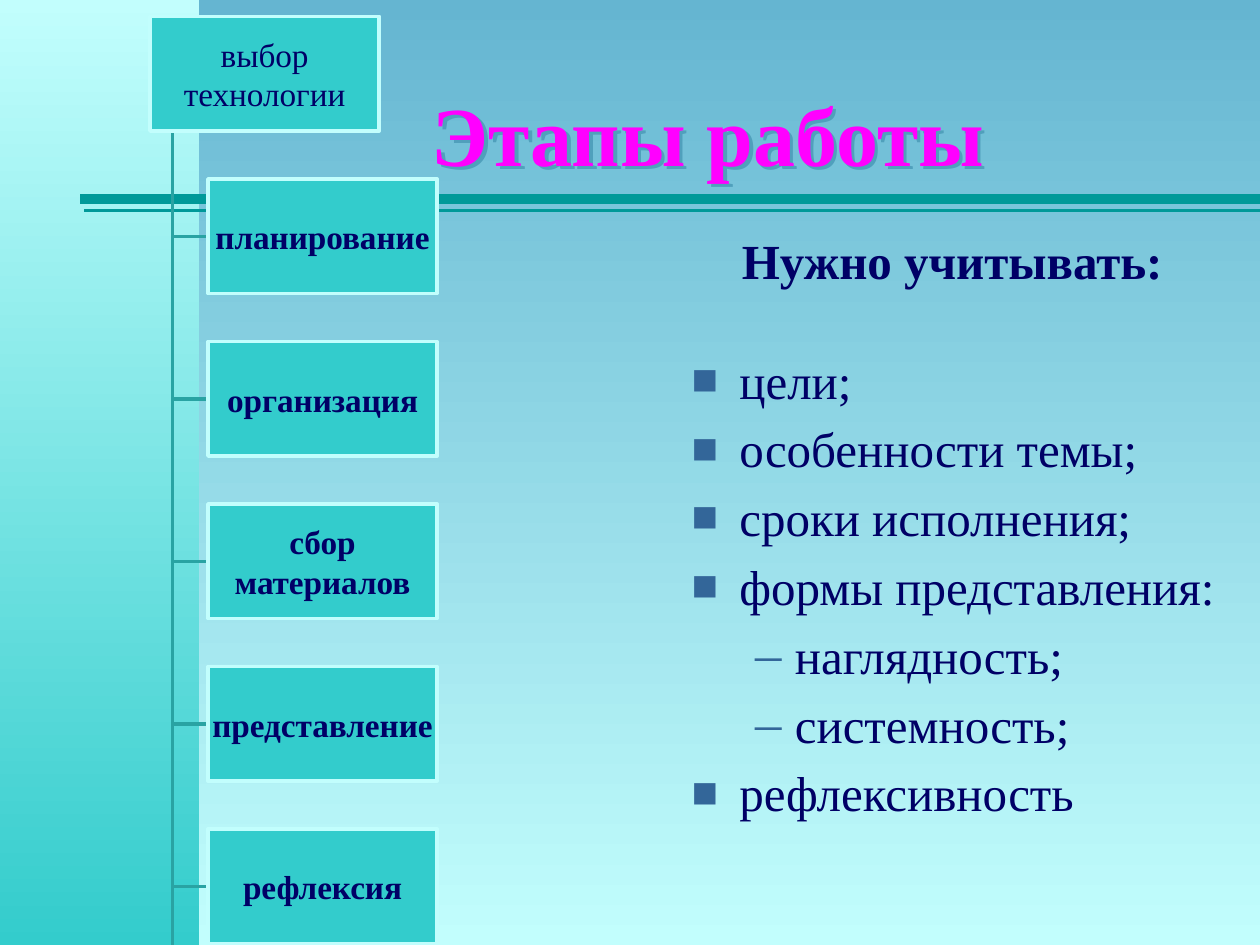
"""Build a slide on the stages of work, with a chain of steps and a list of points."""
from lxml.etree import SubElement as Sub
from pptx import Presentation
from pptx.dml.color import RGBColor as Rgb
from pptx.enum.shapes import MSO_CONNECTOR as Link, MSO_SHAPE as Form
from pptx.enum.text import MSO_ANCHOR as Anchor, PP_ALIGN as Align
from pptx.oxml.ns import qn
from pptx.util import Inches as In, Pt

TITLE = "Этапы работы"
FIRST = "выбор технологии"
STEPS = ["планирование", "организация", "сбор материалов", "представление", "рефлексия"]
HEAD = "Нужно учитывать:"
POINTS = [
    (0, "цели;"),
    (0, "особенности темы;"),
    (0, "сроки исполнения;"),
    (0, "формы представления:"),
    (1, "наглядность;"),
    (1, "системность;"),
    (0, "рефлексивность"),
]
MARKS = [("■", 90, 0.38, 0.38), ("–", 108, 0.82, 0.31)]
HEX = {"sky": "65B5D1", "pale": "C2FEFD", "aqua": "33CCCC", "rule": "009999", "link": "29A3A3",
       "ink": "000066", "pink": "FF00FF", "mark": "336699", "shade": "50A0BC"}
FONT = "Times New Roman"
WIDE, HIGH = 10, 7.5
BOX_W, BOX_H, PITCH = 1.82, 0.91, 1.29
TOP, ROOT, STEP, TRUNK = 0.13, 1.19, 1.65, 1.37
RULES = [(1.67, 2), (1.58, 6)]


def tint(name):
    return Rgb.from_string(HEX[name])


def blend(fill, *names):
    fill.gradient()
    fill.gradient_angle = 270
    for stop, name in zip(fill.gradient_stops, names):
        stop.color.rgb = tint(name)


def write(frame, *lines, size=28, color="ink", bold=False, align=Align.LEFT,
          anchor=Anchor.TOP, pad=(0.1, 0.05), wrap=True):
    frame.word_wrap, frame.vertical_anchor = wrap, anchor
    frame.margin_left = frame.margin_right = In(pad[0])
    frame.margin_top = frame.margin_bottom = In(pad[1])
    for n, line in enumerate(lines):
        para = frame.add_paragraph() if n else frame.paragraphs[0]
        para.alignment = align
        run = para.add_run()
        run.text = line
        font = run.font
        font.name, font.size, font.bold = FONT, Pt(size), bold
        font.color.rgb = tint(color)
    return frame.paragraphs


def rule(shapes, y, width):
    line = shapes.add_connector(Link.STRAIGHT, In(0.68), In(y), In(WIDE), In(y))
    line.line.color.rgb, line.line.width = tint("rule"), Pt(width)
    line.line._get_or_add_ln().set("cap", "sq")
    Sub(line._element.spPr, qn("a:effectLst"))


def branch(shapes, *spots):
    pen = shapes.build_freeform(In(TRUNK), In(TOP + BOX_H))
    pen.add_line_segments([(In(x), In(y)) for x, y in spots], close=False)
    bend = pen.convert_to_shape()
    bend.shadow.inherit = False
    bend.fill.background()
    bend.line.color.rgb, bend.line.width = tint("link"), Pt(2)


def block(shapes, x, y, text, bold):
    box = shapes.add_shape(Form.RECTANGLE, In(x), In(y), In(BOX_W), In(BOX_H))
    box.shadow.inherit = False
    box.fill.solid()
    box.fill.fore_color.rgb = tint("aqua")
    box.line.color.rgb, box.line.width = tint("pale"), Pt(2)
    write(box.text_frame, text, size=19, bold=bold, align=Align.CENTER,
          anchor=Anchor.MIDDLE, pad=(0.01, 0.01))


def bullet(para, level):
    sign, share, left, hang = MARKS[level]
    para.level, para.space_before = level, Pt(5.7)
    props = para._p.get_or_add_pPr()
    props.set("marL", str(In(left)))
    props.set("indent", str(-In(hang)))
    Sub(Sub(props, qn("a:buClr")), qn("a:srgbClr"), val=HEX["mark"])
    Sub(props, qn("a:buSzPct"), val=str(share * 1000))
    Sub(props, qn("a:buFont"), typeface=FONT)
    Sub(props, qn("a:buChar"), char=sign)


def shade(shape):
    shape.fill.background()
    shape.line.fill.background()
    cast = Sub(Sub(shape._element.spPr, qn("a:effectLst")), qn("a:outerShdw"),
               dist="35921", dir="2700000", algn="ctr", rotWithShape="0")
    Sub(cast, qn("a:srgbClr"), val=HEX["shade"])


def main():
    deck = Presentation()
    deck.slide_width, deck.slide_height = In(WIDE), In(HIGH)
    slide = deck.slides.add_slide(deck.slide_layouts[5])
    shapes = slide.shapes
    blend(slide.background.fill, "sky", "pale")

    band = shapes.add_shape(Form.RECTANGLE, 0, 0, In(1.58), In(HIGH))
    band.shadow.inherit = False
    band.line.fill.background()
    blend(band.fill, "pale", "aqua")
    for y, width in RULES:
        rule(shapes, y, width)

    title = shapes.title
    title.left, title.top, title.width, title.height = In(0.65), In(0.29), In(9.1), In(1.21)
    para = write(title.text_frame, TITLE, size=48, color="pink", bold=True,
                 align=Align.CENTER, anchor=Anchor.BOTTOM)[0]
    title.text_frame.margin_left = In(0.94)
    para.line_spacing = 0.8
    shade(title)

    tops = [TOP + n * PITCH for n in range(1, len(STEPS) + 1)]
    branch(shapes, (TRUNK, HIGH))
    for y in reversed(tops):
        mid = y + BOX_H / 2
        branch(shapes, (TRUNK, mid), (STEP, mid))
    block(shapes, ROOT, TOP, FIRST, False)
    for y, text in zip(tops, STEPS):
        block(shapes, STEP, y, text, True)

    body = shapes.add_textbox(In(5.39), In(2.73), In(4.49), In(4.17))
    paras = write(body.text_frame, *(text for _, text in POINTS))
    for para, (level, _) in zip(paras, POINTS):
        bullet(para, level)
    head = shapes.add_textbox(In(5.79), In(1.78), In(3.62), In(0.57))
    write(head.text_frame, HEAD, bold=True, wrap=False)
    deck.save("out.pptx")


if __name__ == "__main__":
    main()
